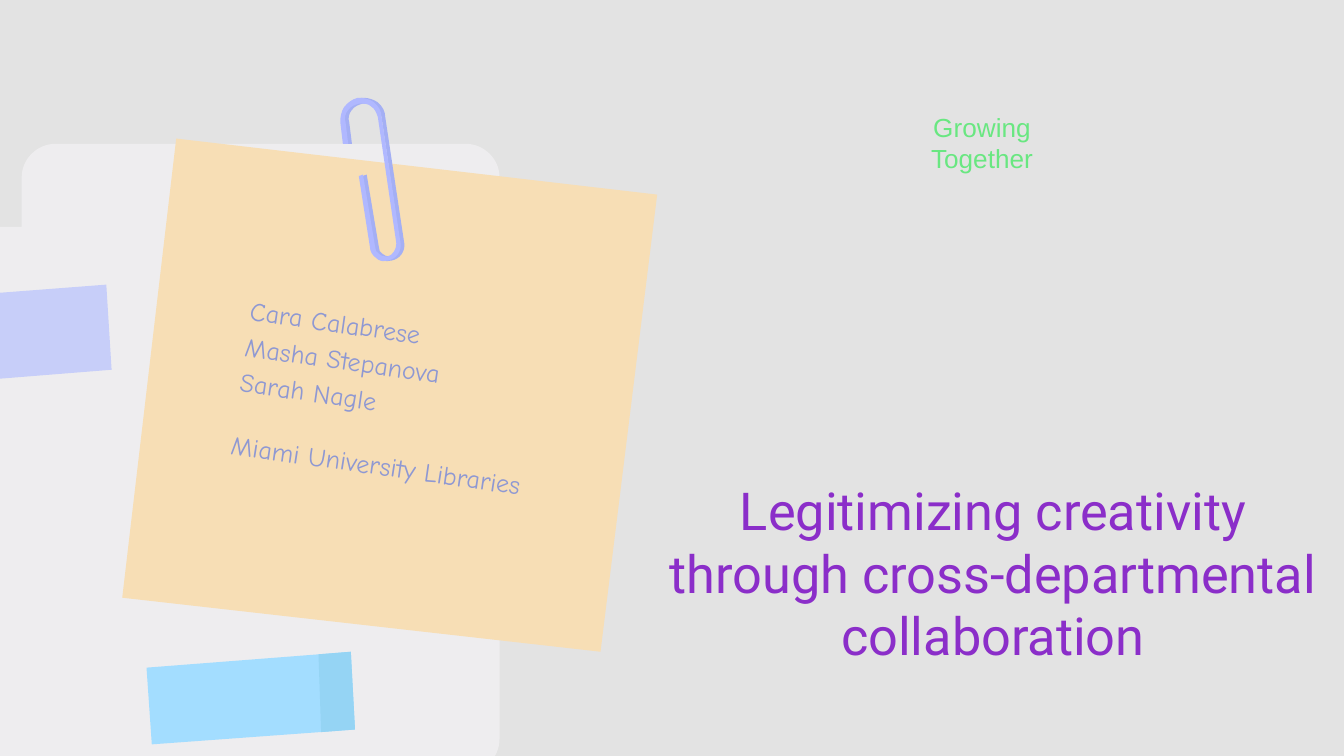
import math

import lxml.etree
import pptx
import pptx.dml.color
import pptx.enum.text
import pptx.oxml.ns
import pptx.util

Cm = pptx.util.Cm
Pt = pptx.util.Pt
RGB = pptx.dml.color.RGBColor.from_string
qn = pptx.oxml.ns.qn

COLORS = {
    "desk": "E3E3E3",
    "folder": "EEEDEF",
    "note": "F7DEB5",
    "clip shade": "A4AFF4",
    "clip": "B0B8FF",
    "lavender tape": "C7CEF9",
    "blue tape": "A3DDFF",
    "tape fold": "95D4F4",
    "title": "8B2EC9",
    "names": "8E98D3",
    "theme": "69E781",
}
TILT = -4


def draw_outline(shapes, color, steps, tilt=TILT, shift=0):
    points = [step[i:i + 2] for step in steps for i in range(0, len(step), 2)]
    center_x, center_y = [(min(values) + max(values)) / 2 for values in zip(*points)]
    cosine, sine = math.cos(math.radians(tilt)), math.sin(math.radians(tilt))
    level = []
    for x, y in points:
        dx, dy = x - center_x, y - center_y
        level.append((Cm(center_x + dx * cosine + dy * sine + shift),
                      Cm(center_y + dy * cosine - dx * sine)))
    builder = shapes.build_freeform(*level[0])
    builder.add_line_segments(level[1:], close=True)
    shape = builder.convert_to_shape()
    segments = iter(list(shape._element.iter(qn("a:lnTo"))))
    for step in steps[1:]:
        segment = next(segments)
        if len(step) == 6:
            segment.tag = qn("a:cubicBezTo")
            for _ in range(2):
                extra = next(segments)
                segment.append(extra[0])
                extra.getparent().remove(extra)
    shape.rotation = tilt
    shape.shadow.inherit = False
    shape.fill.solid()
    shape.fill.fore_color.rgb = RGB(COLORS[color])
    shape.line.fill.background()


def add_text(color, place, lines, font, size, align):
    box = page.shapes.add_textbox(*[Cm(length) for length in place])
    frame = box.text_frame
    frame.word_wrap = True
    frame.text = "\n".join(lines)
    for para in frame.paragraphs:
        para.alignment = align
        para.font.name = font
        para.font.size = Pt(size)
        para.font.color.rgb = RGB(COLORS[color])
    return box


deck = pptx.Presentation()
deck.slide_width = Cm(25.4)
deck.slide_height = Cm(14.29)
page = deck.slides.add_slide(deck.slide_layouts[6])
page.background.fill.solid()
page.background.fill.fore_color.rgb = RGB(COLORS["desk"])

folder = [
    (8.81, 2.72), (9.14, 2.72, 9.44, 3, 9.44, 3.35),
    (9.44, 13.97), (9.44, 14.33, 9.14, 14.6, 8.81, 14.6),
    (-12.4, 14.6), (-12.75, 14.6, -13.03, 14.33, -13.03, 13.97),
    (-13.03, 4.93), (-13.03, 4.57, -12.75, 4.29, -12.4, 4.29),
    (0.41, 4.29), (0.41, 3.35), (0.41, 3, 0.71, 2.72, 1.04, 2.72),
]
note = [(3.33, 2.62), (2.31, 11.3), (11.35, 12.32), (12.42, 3.68)]
clip = [
    (6.81, 1.85), (6.76, 1.85),
    (6.65, 1.88, 6.58, 1.93, 6.5, 2.03), (6.45, 2.11, 6.43, 2.21, 6.43, 2.31),
    (6.48, 2.72), (6.58, 2.72), (6.53, 2.31),
    (6.5, 2.24, 6.53, 2.13, 6.58, 2.08), (6.63, 2.01, 6.71, 1.98, 6.78, 1.96),
    (6.81, 1.96),
    (6.88, 1.96, 6.96, 1.96, 7.01, 2.01), (7.09, 2.06, 7.11, 2.13, 7.14, 2.21),
    (7.49, 4.6), (7.49, 4.72, 7.42, 4.83, 7.32, 4.85), (7.29, 4.85),
    (7.24, 4.85, 7.19, 4.83, 7.16, 4.8), (7.11, 4.78, 7.09, 4.72, 7.09, 4.67),
    (6.86, 3.3), (6.78, 3.33), (6.99, 4.67),
    (6.99, 4.75, 7.04, 4.83, 7.11, 4.88), (7.16, 4.93, 7.24, 4.95, 7.29, 4.93),
    (7.32, 4.93), (7.49, 4.9, 7.59, 4.75, 7.57, 4.6),
    (7.21, 2.21),
    (7.21, 2.11, 7.16, 2.01, 7.06, 1.93), (6.99, 1.88, 6.88, 1.85, 6.81, 1.85),
]
lavender_tape = [(2.01, 5.38), (-3.99, 5.84), (-3.89, 7.47), (2.11, 6.99)]
blue_tape = [(6.63, 12.32), (2.77, 12.62), (2.87, 14.07), (6.71, 13.79)]
tape_fold = [(6.63, 12.32), (6.02, 12.37), (6.07, 13.84), (6.71, 13.79)]

draw_outline(page.shapes, "folder", folder, tilt=0)
draw_outline(page.shapes, "note", note)
draw_outline(page.shapes, "clip shade", clip, shift=0.07)
draw_outline(page.shapes, "clip", clip)
draw_outline(page.shapes, "lavender tape", lavender_tape)
tape = page.shapes.add_group_shape()
draw_outline(tape.shapes, "blue tape", blue_tape)
draw_outline(tape.shapes, "tape fold", tape_fold)

LEFT = pptx.enum.text.PP_ALIGN.LEFT
CENTER = pptx.enum.text.PP_ALIGN.CENTER

title = add_text("title", (12.34, 8.79, 12.85, 4.93),
                 ["Legitimizing creativity through cross-departmental collaboration"],
                 "Roboto", 28, CENTER)
title.text_frame.margin_top = Cm(0.25)

names = add_text("names", (4.32, 5.05, 6.78, 4.37),
                 ["Cara Calabrese", "Masha Stepanova", "Sarah Nagle", "Miami University Libraries"],
                 "Comic Neue", 14, LEFT)
names.rotation = 8.1
names.text_frame.margin_top = Cm(0.86)
*people, library = names.text_frame.paragraphs
for para in people:
    para.line_spacing = 1.15
library.space_before = Pt(17)

add_text("theme", (12.92, 1.98, 11.28, 6.2), ["Growing\vTogether"], "Arial", 14, CENTER)

deck.save("out.pptx")
